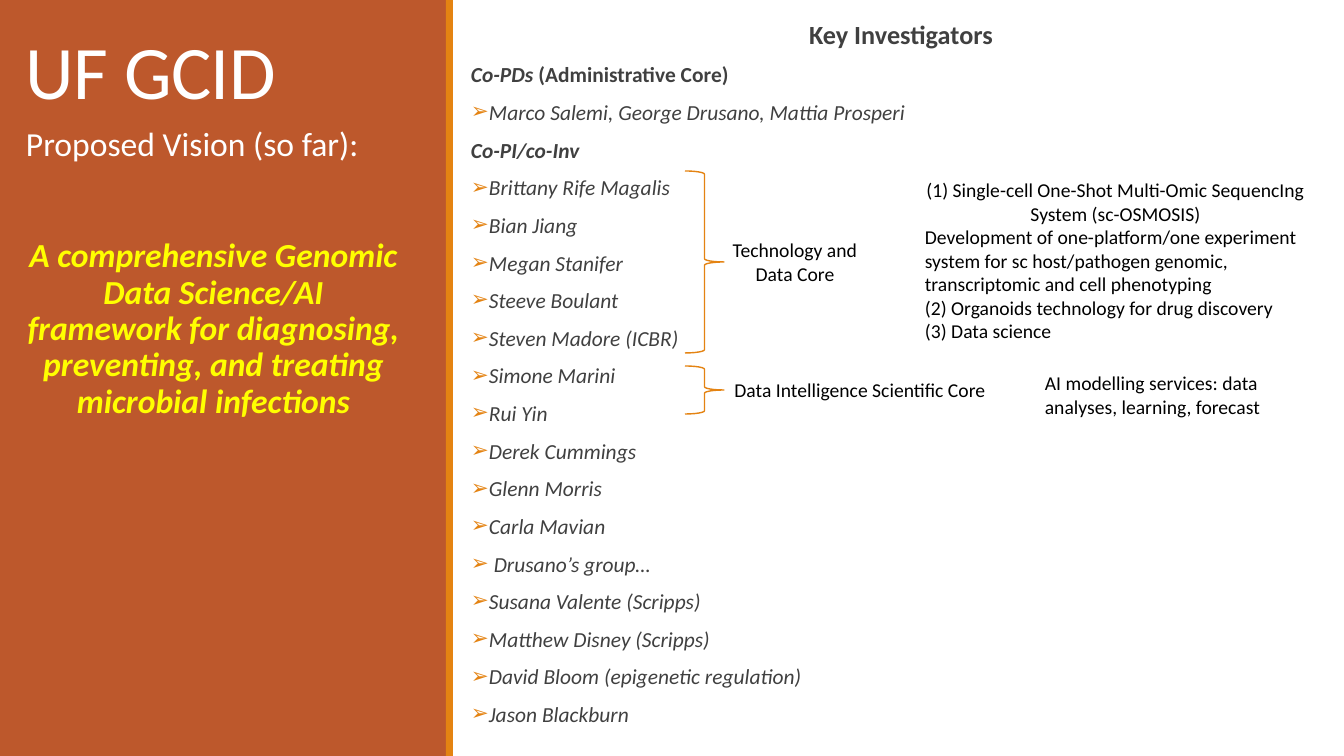
from dataclasses import dataclass

from lxml import etree
from pptx import Presentation
from pptx import util as u
from pptx.dml.color import RGBColor
from pptx.enum import shapes, text
from pptx.oxml.ns import qn


@dataclass(frozen=True)
class Theme:
    font: str = "Calibri"
    rust: str = "BD582C"
    orange: str = "E48312"
    white: str = "FFFFFF"
    yellow: str = "FFFF00"
    gray: str = "404040"
    black: str = "000000"
    title: float = 54
    vision: float = 24
    head: float = 18.7
    item: float = 15.3
    label: float = 14


THEME = Theme()
LEFT, MID = text.PP_ALIGN.LEFT, text.PP_ALIGN.CENTER
TOP, BASE = text.MSO_ANCHOR.TOP, text.MSO_ANCHOR.BOTTOM

TEAM = [
    "Brittany Rife Magalis", "Bian Jiang", "Megan Stanifer", "Steeve Boulant",
    "Steven Madore (ICBR)", "Simone Marini", "Rui Yin", "Derek Cummings",
    "Glenn Morris", "Carla Mavian", " Drusano’s group…",
    "Susana Valente (Scripps)", "Matthew Disney (Scripps)",
    "David Bloom (epigenetic regulation)", "Jason Blackburn",
]
VISION = ("A comprehensive Genomic Data Science/AI framework for diagnosing, "
          "preventing, and treating microbial infections")
OSMOSIS = "(1) Single-cell One-Shot Multi-Omic SequencIng System (sc-OSMOSIS)"
GOALS = [
    "Development of one-platform/one experiment system for sc host/pathogen "
    "genomic, transcriptomic and cell phenotyping",
    "(2) Organoids technology for drug discovery",
    "(3) Data science",
]


def px(count):
    return u.Emu(round(count * 914400 / 100.8))


def place(shape, box):
    shape.left, shape.top, shape.width, shape.height = map(px, box)


def style(run, size, color, bold=False, italic=False):
    font = run.font
    font.name, font.size = THEME.font, u.Pt(size)
    font.bold, font.italic = bold, italic
    font.color.rgb = RGBColor.from_string(color)


def frame(shape, box, anchor=TOP, side=10):
    """Move a placeholder and fix its insets, anchor and text fit."""
    place(shape, box)
    body = shape.text_frame
    body.auto_size = text.MSO_AUTO_SIZE.NONE
    body.word_wrap = True
    body.vertical_anchor = anchor
    body.margin_left = body.margin_right = px(side)
    body.margin_top = body.margin_bottom = px(5)
    return body


def write(body, runs, size, color, align=LEFT, bold=False, italic=False):
    """Add a paragraph, filling the first one while it is still empty."""
    first = body.paragraphs[0]
    para = body.add_paragraph() if first.runs else first
    para.alignment = align
    for words in [runs] if isinstance(runs, str) else runs:
        run = para.add_run()
        run.text = words
        style(run, size, color, bold, italic)
    return para


def space(para, line, before=12, after=2):
    para.line_spacing = line
    para.space_before, para.space_after = u.Pt(before), u.Pt(after)


def bullet(para, mark=None):
    """Set the bullet mark with its hanging indent, or remove both."""
    props = para._p.get_or_add_pPr()
    indent = px(10) if mark else 0
    props.set("marL", str(indent))
    props.set("indent", str(-indent))
    if not mark:
        etree.SubElement(props, qn("a:buNone"))
        return
    tint = etree.SubElement(props, qn("a:buClr"))
    etree.SubElement(tint, qn("a:srgbClr"), val=THEME.orange)
    etree.SubElement(props, qn("a:buChar"), char=mark)


def panel(slide, box, color):
    shape = slide.shapes.add_shape(shapes.MSO_SHAPE.RECTANGLE, *map(px, box))
    shape.shadow.inherit = False
    shape.fill.solid()
    shape.fill.fore_color.rgb = RGBColor.from_string(color)
    shape.line.fill.background()
    shape.element.getparent().insert(2, shape.element)


def brace(slide, box):
    shape = slide.shapes.add_shape(shapes.MSO_SHAPE.RIGHT_BRACE, *map(px, box))
    shape.shadow.inherit = False
    shape.fill.background()
    shape.line.color.rgb = RGBColor.from_string(THEME.orange)
    shape.line.width = u.Pt(1)


def label(slide, box, lines, align=LEFT, wrap=True):
    body = slide.shapes.add_textbox(*map(px, box)).text_frame
    body.word_wrap = wrap
    body.auto_size = text.MSO_AUTO_SIZE.SHAPE_TO_FIT_TEXT
    for line in lines:
        write(body, line, THEME.label, THEME.black, align)
    return body


def heading(shape):
    body = frame(shape, (16, 27, 353, 93), BASE)
    para = write(body, "UF GCID", THEME.title, THEME.white)
    space(para, 0.85, 0, 0)
    para.runs[0].font._element.set("spc", "-50")


def vision(shape):
    body = frame(shape, (16, 122, 395, 387))
    lead = write(body, "Proposed Vision (so far):", THEME.vision, THEME.white)
    space(lead, 0.9)
    goal = write(body, VISION, THEME.vision, THEME.yellow, MID, True, True)
    space(goal, 0.9, before=52)
    for para in (lead, goal):
        bullet(para)


def roster(shape):
    body = frame(shape, (471, 22, 860, 718), side=0)

    def add(runs, size=THEME.item, align=LEFT, bold=True, italic=True, mark=None):
        para = write(body, runs, size, THEME.gray, align, bold, italic)
        space(para, 0.7)
        bullet(para, mark)
        return para

    def people(names):
        for name in names:
            add(name, bold=False, mark="➢")

    add("Key Investigators", THEME.head, MID, italic=False)
    lead = add(["Co-PDs ", "(Administrative Core)"])
    lead.runs[1].font.italic = False
    people(["Marco Salemi, George Drusano, Mattia Prosperi"])
    add("Co-PI/co-Inv")
    people(TEAM)


def main():
    deck = Presentation()
    deck.slide_width, deck.slide_height = px(1344), px(756)
    slide = deck.slides.add_slide(deck.slide_layouts[3])
    title, left, right = list(slide.placeholders)[:3]

    panel(slide, (446, 0, 7, 756), THEME.orange)
    panel(slide, (0, 0, 446, 756), THEME.rust)
    heading(title)
    vision(left)
    roster(right)

    brace(slide, (685, 171, 39, 182))
    label(slide, (722, 233, 146, 57), ["Technology and", "Data Core"], MID, False)
    brace(slide, (685, 366, 39, 48))
    label(slide, (723, 373, 274, 34), ["Data Intelligence Scientific Core"], MID, False)
    aims = label(slide, (915, 173, 401, 176), [OSMOSIS, *GOALS])
    aims.paragraphs[0].alignment = MID
    label(slide, (1035, 366, 300, 57),
          ["AI modelling services: data analyses, learning, forecast"])
    deck.save("out.pptx")


if __name__ == "__main__":
    main()
